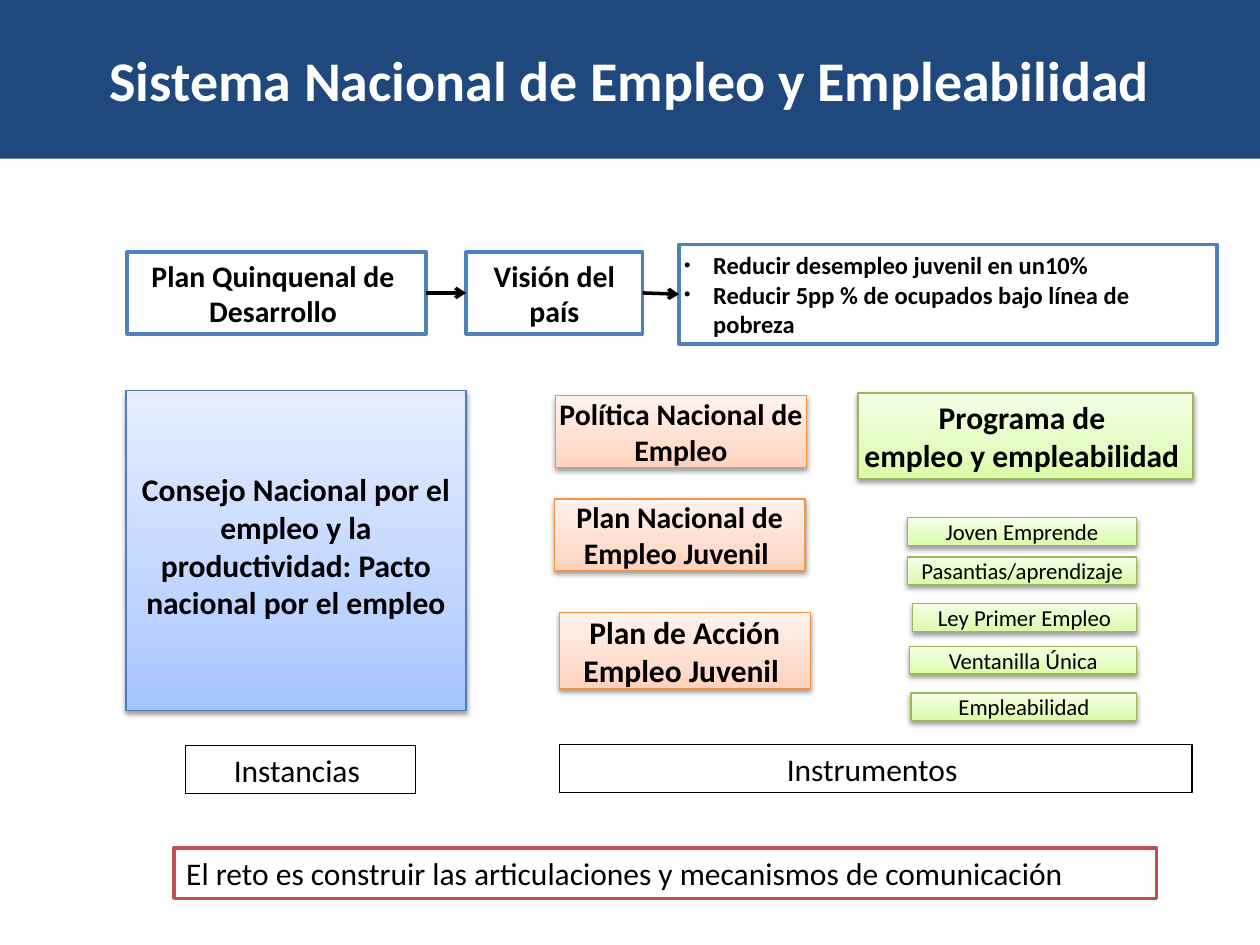
from lxml import etree
from pptx import Presentation
from pptx.dml.color import RGBColor
from pptx.enum.shapes import MSO_CONNECTOR, MSO_SHAPE
from pptx.enum.text import MSO_ANCHOR, PP_ALIGN
from pptx.oxml import parse_xml
from pptx.oxml.ns import nsdecls, qn
from pptx.util import Inches, Pt

RECT = MSO_SHAPE.RECTANGLE
STRAIGHT = MSO_CONNECTOR.STRAIGHT
LEFT, CENTER = PP_ALIGN.LEFT, PP_ALIGN.CENTER
TOP, MIDDLE = MSO_ANCHOR.TOP, MSO_ANCHOR.MIDDLE
LEFT_SIDE, RIGHT_SIDE = 1, 3

FONT = "Calibri"
UNIT = Inches(0.1)  # grid of 100 columns by 75 rows
NO_INSET = (0, 0, 0, 0)
THIN_INSET = (0.04, 0.04, 0.04, 0.04)
TEXT_INSET = (0.1, 0.05, 0.1, 0.05)

# Gradient colours from bottom to top, then the outline
BLUE = (("A4C4FF", "BFD4FF", "E6EEFF"), "4B7EBC")
ORANGE = (("FFD2BD", "FFDED0", "FFF2ED"), "F69240")
GREEN = (("DAFDA7", "E4FCC2", "F5FFE7"), "98B955")


def color(hex_code):
    return RGBColor.from_string(hex_code)


def add_box(slide, cell, fill=None, line=None, weight=0.75):
    s = slide.shapes.add_shape(RECT, *(round(n * UNIT) for n in cell))
    s.shadow.inherit = False
    if fill:
        s.fill.solid()
        s.fill.fore_color.rgb = color(fill)
    else:
        s.fill.background()
    if line:
        s.line.color.rgb = color(line)
        s.line.width = Pt(weight)
    else:
        s.line.fill.background()
    return s


def add_text(s, lines, size, bold=False, ink="000000", inset=THIN_INSET,
             align=CENTER, anchor=MIDDLE):
    tf = s.text_frame
    tf.word_wrap = True
    tf.vertical_anchor = anchor
    (tf.margin_left, tf.margin_top,
     tf.margin_right, tf.margin_bottom) = (Inches(n) for n in inset)
    for i, line in enumerate(lines):
        p = tf.paragraphs[0] if i == 0 else tf.add_paragraph()
        p.alignment = align
        r = p.add_run()
        r.text = line
        r.font.name = FONT
        r.font.size = Pt(size)
        r.font.bold = bold
        r.font.color.rgb = color(ink)


def add_bullets(s):
    for p in s.text_frame.paragraphs:
        pPr = p._p.get_or_add_pPr()
        pPr.set("marL", str(Inches(0.23)))
        pPr.set("indent", str(-Inches(0.23)))
        etree.SubElement(pPr, qn("a:buSzPct")).set("val", "75000")
        etree.SubElement(pPr, qn("a:buFont")).set("typeface", "Arial")
        etree.SubElement(pPr, qn("a:buChar")).set("char", "•")


def add_raised_box(slide, cell, theme):
    """Box with a vertical gradient and a soft shadow below."""
    shades, line = theme
    s = add_box(slide, cell, line=line)
    stops = "".join(
        f'<a:gs pos="{pos}"><a:srgbClr val="{shade}"/></a:gs>'
        for pos, shade in zip((0, 35000, 100000), shades))
    spPr = s._element.spPr
    spPr.replace(spPr.find(qn("a:noFill")), parse_xml(
        f'<a:gradFill {nsdecls("a")} rotWithShape="1"><a:gsLst>{stops}</a:gsLst>'
        '<a:lin ang="16200000" scaled="0"/></a:gradFill>'))
    spPr.find(qn("a:effectLst")).append(parse_xml(
        f'<a:outerShdw {nsdecls("a")} blurRad="{Pt(3.1)}" dist="{Pt(1.6)}" '
        'dir="5400000" rotWithShape="0"><a:srgbClr val="000000">'
        '<a:alpha val="38000"/></a:srgbClr></a:outerShdw>'))
    return s


def add_arrow(slide, start, end):
    c = slide.shapes.add_connector(STRAIGHT, 0, 0, 0, 0)
    c.begin_connect(start, RIGHT_SIDE)
    c.end_connect(end, LEFT_SIDE)
    c.line.color.rgb = color("000000")
    c.line.width = Pt(2)
    etree.SubElement(c.line._get_or_add_ln(), qn("a:tailEnd")).set("type", "arrow")
    etree.SubElement(c._element.spPr, qn("a:effectLst"))


def add_vision_row(slide):
    plan, vision, goals = (
        add_box(slide, cell, "FFFFFF", "4F81BD", 2)
        for cell in ((10.1, 20, 23.7, 6.5), (37, 20, 14, 6.5),
                     (53.9, 19.4, 42.7, 7.9)))
    add_text(plan, ["Plan Quinquenal de ", "Desarrollo "], 17, True)
    add_text(vision, ["Visión del país"], 17, True)
    add_text(goals, ["Reducir desempleo juvenil en un10%",
                     "Reducir 5pp % de ocupados bajo línea de pobreza"],
             14, True, align=LEFT)
    add_bullets(goals)
    add_arrow(slide, plan, vision)
    add_arrow(slide, vision, goals)


def add_instruments(slide):
    # National policy and plans
    for text, left, top, height, size in (
            ("Política Nacional de Empleo", 44.1, 31.4, 5.7, 17),
            ("Plan Nacional de Empleo Juvenil ", 44, 39.6, 5.7, 17),
            ("Plan de Acción Empleo Juvenil ", 44.4, 48.6, 6.1, 18)):
        s = add_raised_box(slide, (left, top, 19.9, height), ORANGE)
        add_text(s, [text], size, True, inset=NO_INSET)

    # Programme and its components, which share a right edge
    s = add_raised_box(slide, (68.1, 31.2, 26.6, 6.8), GREEN)
    add_text(s, ["Programa de ", "empleo y empleabilidad "], 18, True)
    right = 90.2
    for text, left, top in (("Joven Emprende", 72, 41.1),
                            ("Pasantias/aprendizaje", 72, 44.2),
                            ("Ley Primer Empleo", 72.4, 47.9),
                            ("Ventanilla Única", 72.2, 51.3),
                            ("Empleabilidad", 72.3, 55)):
        s = add_raised_box(slide, (left, top, right - left, 2.2), GREEN)
        add_text(s, [text], 13, inset=NO_INSET)


def main():
    prs = Presentation()
    prs.slide_width, prs.slide_height = 100 * UNIT, 75 * UNIT
    slide = prs.slides.add_slide(prs.slide_layouts[6])

    # Title band
    s = add_box(slide, (0, 0, 100, 12.6), "1F497D")
    add_text(s, ["Sistema Nacional de Empleo y Empleabilidad"], 32, True,
             "FFFFFF", TEXT_INSET)

    add_vision_row(slide)

    # Council
    s = add_raised_box(slide, (10, 31, 27, 25.4), BLUE)
    add_text(s, ["Consejo Nacional por el empleo y la productividad: "
                 "Pacto nacional por el empleo"], 18, True,
             inset=(0, 0, 0, 0.08))

    add_instruments(slide)

    # Column labels
    for text, cell, weight in (
            ("Instancias ", (14.7, 59.2, 18.3, 3.8), 0.5),
            ("Instrumentos ", (44.4, 59.1, 50.2, 3.8), 0.75)):
        add_text(add_box(slide, cell, line="000000", weight=weight), [text], 18)

    # Closing challenge
    s = add_box(slide, (13.8, 67.3, 78, 4), "FFFFFF", "C0504D", 2)
    add_text(s, ["El reto es construir las articulaciones y mecanismos "
                 "de comunicación"], 18, inset=TEXT_INSET, align=LEFT, anchor=TOP)

    prs.save("out.pptx")


if __name__ == "__main__":
    main()
